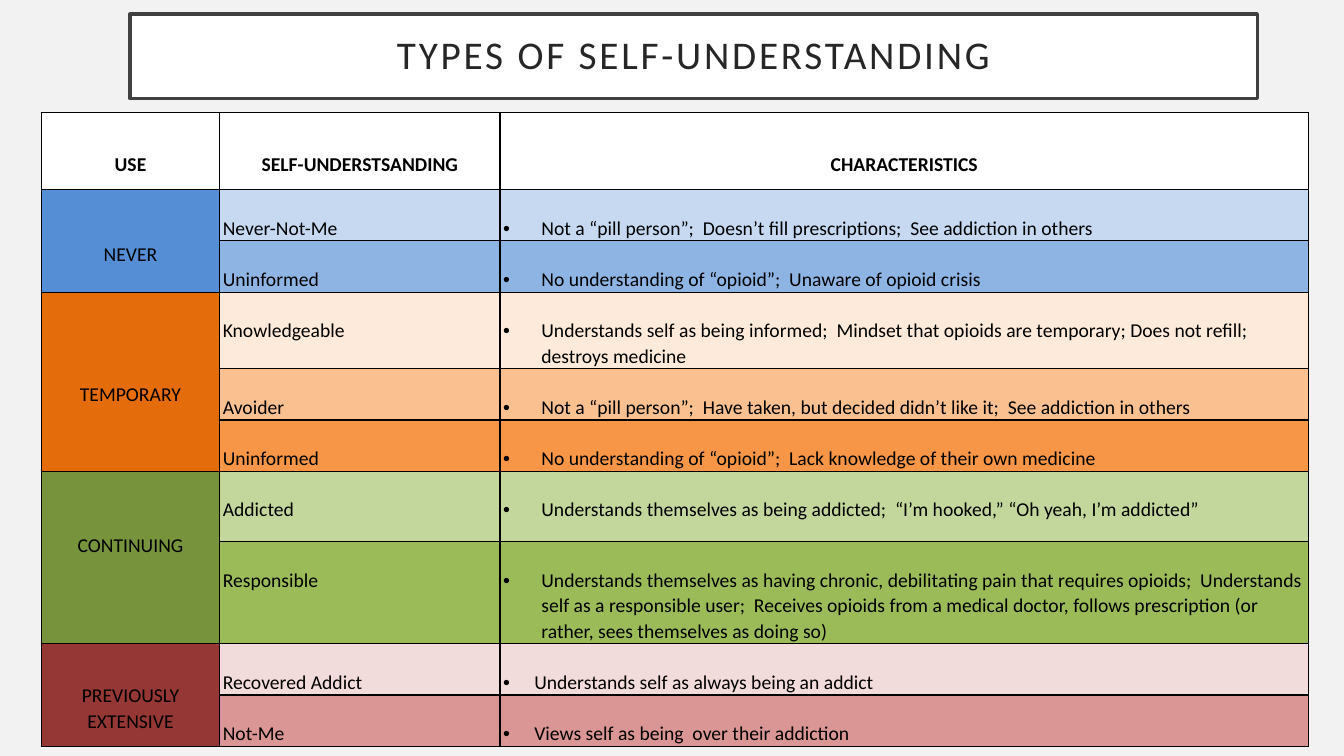
from lxml.etree import SubElement
from pptx import Presentation
from pptx.dml.color import RGBColor
from pptx.enum.shapes import MSO_SHAPE
from pptx.enum.text import MSO_ANCHOR, PP_ALIGN
from pptx.oxml.ns import qn
from pptx.util import Inches, Pt

TITLE = "TYPES OF SELF-UNDERSTANDING"
HEADERS = ["USE", "SELF-UNDERSTSANDING", "CHARACTERISTICS"]
# Each use: name, colour, hanging indent, rows of (self-understanding, characteristics, colour, height)
USES = [
    ("NEVER", "558ED5", 0.38, [
        ("Never-Not-Me", "Not a “pill person”;  Doesn’t fill prescriptions;  See addiction in others", "C6D9F1", 0.51),
        ("Uninformed", "No understanding of “opioid”;  Unaware of opioid crisis", "8EB4E3", 0.51),
    ]),
    ("TEMPORARY", "E46C0A", 0.38, [
        ("Knowledgeable", "Understands self as being informed;  Mindset that opioids are temporary; "
         "Does not refill; destroys medicine", "FDEADA", 0.74),
        ("Avoider", "Not a “pill person”;  Have taken, but decided didn’t like it;  See addiction in others",
         "FAC090", 0.51),
        ("Uninformed", "No understanding of “opioid”;  Lack knowledge of their own medicine", "F79646", 0.51),
    ]),
    ("CONTINUING", "77933C", 0.38, [
        ("Addicted", "Understands themselves as being addicted;  “I’m hooked,” “Oh yeah, I’m addicted”",
         "C3D69B", 0.7),
        ("Responsible", "Understands themselves as having chronic, debilitating pain that requires opioids;  "
         "Understands self as a responsible user;  Receives opioids from a medical doctor, follows "
         "prescription (or rather, sees themselves as doing so)", "9BBB59", 0.99),
    ]),
    ("PREVIOUSLY EXTENSIVE", "953735", 0.31, [
        ("Recovered Addict", "Understands self as always being an addict", "F2DCDB", 0.51),
        ("Not-Me", "Views self as being  over their addiction", "D99694", 0.51),
    ]),
]
THEME = {
    "font": "Calibri", "title size": 28, "table size": 14,
    "background": "F2F2F2", "white": "FFFFFF", "black": "000000",
    "title": "262626", "frame": "404040",
}
COLUMN_WIDTHS = [1.77, 2.78, 8.02]
HEADER_HEIGHT = 0.76
LINE_GAP = 0.25  # one line of space above the text of a cell
BORDER_WIDTH = Pt(1)


def color(value):
    return RGBColor.from_string(value)


def set_values(target, values):
    for name, value in values.items():
        setattr(target, name, value)


def write(frame, text, size, ink, spacing, align=PP_ALIGN.LEFT, bold=False):
    paragraph = frame.paragraphs[0]
    set_values(paragraph, {"alignment": align, "line_spacing": spacing})
    run = paragraph.add_run()
    run.text = text
    set_values(run.font, {"name": THEME["font"], "size": Pt(size), "bold": bold})
    run.font.color.rgb = color(ink)
    return paragraph


def add_borders(cell):
    properties = cell._tc.get_or_add_tcPr()
    for index, side in enumerate(("a:lnL", "a:lnR", "a:lnT", "a:lnB")):
        line = properties.makeelement(qn(side), {"w": str(BORDER_WIDTH)})
        fill = SubElement(line, qn("a:solidFill"))
        SubElement(fill, qn("a:srgbClr"), val=THEME["black"])
        properties.insert(index, line)


def add_bullet(paragraph, indent):
    properties = paragraph._p.get_or_add_pPr()
    properties.set("marL", str(Inches(indent)))
    properties.set("indent", str(-Inches(indent)))
    SubElement(properties, qn("a:buFont"), typeface="Arial")
    SubElement(properties, qn("a:buChar"), char="•")


def fill_cell(cell, text, fill, centered=False, bold=False, gap_below=False):
    set_values(cell, {
        "margin_left": Inches(0.03), "margin_right": Inches(0.03),
        "margin_top": Inches(0 if gap_below else LINE_GAP),
        "margin_bottom": Inches(LINE_GAP if gap_below else 0),
        "vertical_anchor": MSO_ANCHOR.MIDDLE if centered else MSO_ANCHOR.TOP,
    })
    cell.fill.solid()
    cell.fill.fore_color.rgb = color(fill)
    align = PP_ALIGN.CENTER if centered else PP_ALIGN.LEFT
    return write(cell.text_frame, text, THEME["table size"], THEME["black"], 1.07, align, bold)


def add_title(slide):
    shape = slide.shapes.add_shape(
        MSO_SHAPE.RECTANGLE, Inches(1.29), Inches(0.14), Inches(11.18), Inches(0.84))
    shape.shadow.inherit = False
    shape.fill.solid()
    shape.fill.fore_color.rgb = color(THEME["white"])
    shape.line.color.rgb = color(THEME["frame"])
    shape.line.width = Pt(2.5)
    frame = shape.text_frame
    set_values(frame, {"word_wrap": True, "vertical_anchor": MSO_ANCHOR.MIDDLE})
    paragraph = write(frame, TITLE, THEME["title size"], THEME["title"], 0.9, PP_ALIGN.CENTER)
    paragraph.runs[0].font._element.set("spc", "200")


def add_use_table(slide):
    heights = [HEADER_HEIGHT] + [row[-1] for use in USES for row in use[-1]]
    table = slide.shapes.add_table(
        len(heights), len(COLUMN_WIDTHS), Inches(0.41), Inches(1.12),
        Inches(sum(COLUMN_WIDTHS)), Inches(sum(heights))).table
    set_values(table, {"first_row": False, "horz_banding": False})
    for column, width in zip(table.columns, COLUMN_WIDTHS):
        column.width = Inches(width)
    for row, height in zip(table.rows, heights):
        row.height = Inches(height)

    for column, header in enumerate(HEADERS):
        fill_cell(table.cell(0, column), header, THEME["white"], centered=True, bold=True)
    top = 1
    for use, use_fill, indent, rows in USES:
        use_cell = table.cell(top, 0)
        use_cell.merge(table.cell(top + len(rows) - 1, 0))
        fill_cell(use_cell, use, use_fill, centered=True, gap_below=use == "CONTINUING")
        for index, (understanding, characteristics, fill, _) in enumerate(rows, top):
            fill_cell(table.cell(index, 1), understanding, fill)
            add_bullet(fill_cell(table.cell(index, 2), characteristics, fill), indent)
        top += len(rows)
    for cell in table.iter_cells():
        add_borders(cell)


def main():
    presentation = Presentation()
    set_values(presentation, {"slide_width": Inches(13.33), "slide_height": Inches(7.5)})
    slide = presentation.slides.add_slide(presentation.slide_layouts[6])
    slide.background.fill.solid()
    slide.background.fill.fore_color.rgb = color(THEME["background"])
    add_use_table(slide)
    add_title(slide)
    presentation.save("out.pptx")


if __name__ == "__main__":
    main()
